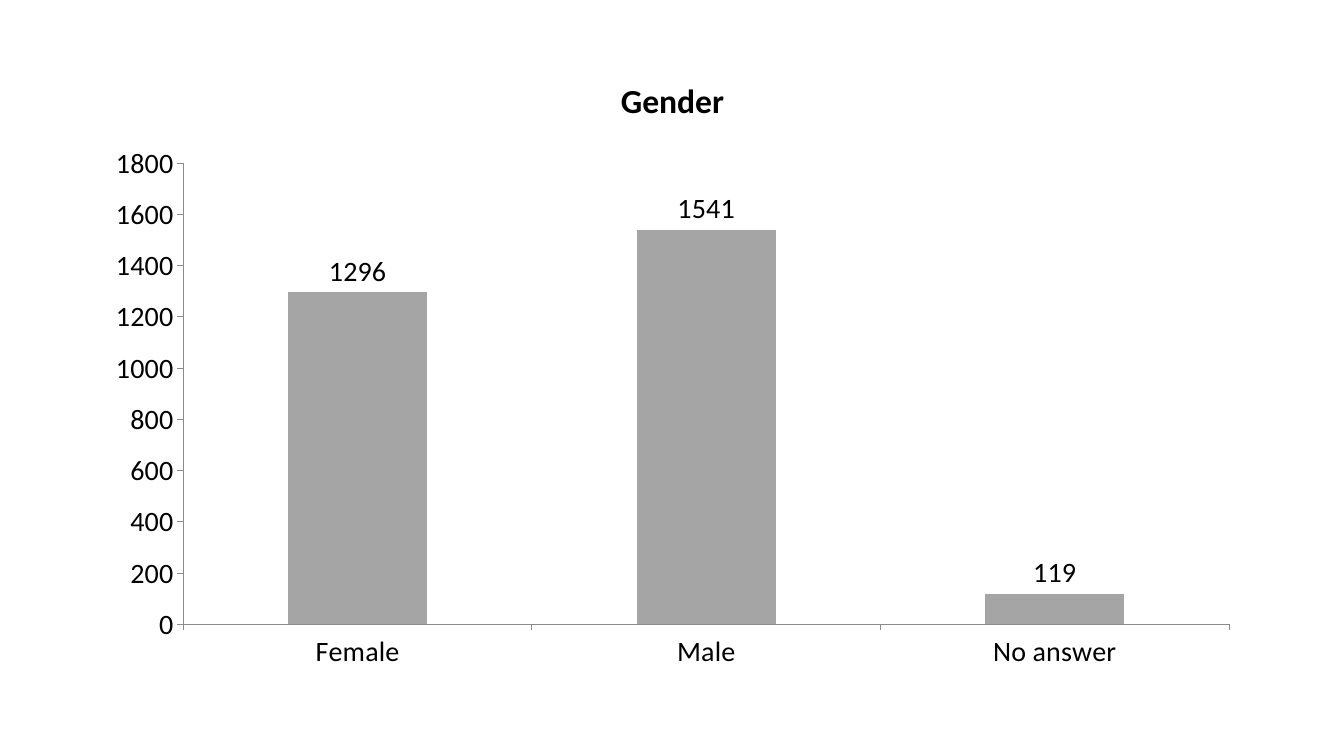
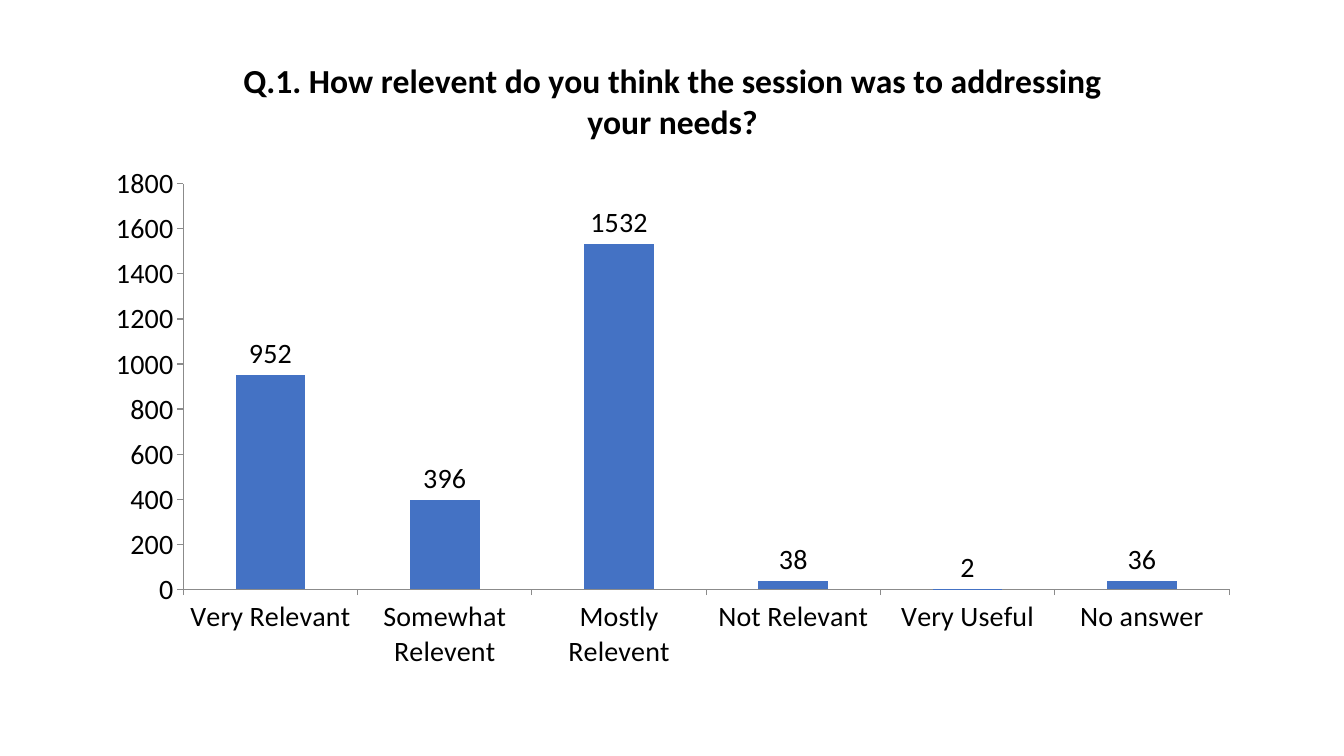
"""Build two survey result slides, each with one column chart."""
import pptx
import pptx.chart.data
import pptx.dml.color
import pptx.enum.chart
import pptx.util
from pptx.dml.color import RGBColor
from pptx.util import Inches

BLACK = RGBColor(0x00, 0x00, 0x00)
AXIS_GRAY = RGBColor(0x8B, 0x8B, 0x8B)
BAR_GRAY = RGBColor(0xA5, 0xA5, 0xA5)
BAR_BLUE = RGBColor(0x44, 0x72, 0xC4)
FONT_NAME = "Calibri"
TEXT_SIZE = 20
TITLE_SIZE = 24
CHART_LEFT = 0.92
CHART_WIDTH = 11.5
CHART_BOTTOM = 6.76

GENDER = {"Female": 1296, "Male": 1541, "No answer": 119}
RELEVANCE = {
    "Very Relevant": 952,
    "Somewhat Relevent": 396,
    "Mostly Relevent": 1532,
    "Not Relevant": 38,
    "Very Useful": 2,
    "No answer": 36,
}


def style_font(font, size, bold=False):
    font.name = FONT_NAME
    font.size = pptx.util.Pt(size)
    font.bold = bold
    font.color.rgb = BLACK


def style_title(chart, title):
    chart.has_title = True
    frame = chart.chart_title.text_frame
    frame.text = title
    style_font(frame.paragraphs[0].runs[0].font, TITLE_SIZE, bold=True)
    chart.chart_title.include_in_layout = False


def style_axis(axis):
    axis.has_major_gridlines = False
    axis.major_tick_mark = pptx.enum.chart.XL_TICK_MARK.OUTSIDE
    axis.minor_tick_mark = pptx.enum.chart.XL_TICK_MARK.NONE
    axis.format.line.color.rgb = AXIS_GRAY
    axis.format.line.width = pptx.util.Pt(0.75)
    style_font(axis.tick_labels.font, TEXT_SIZE)


def style_bars(plot, color):
    plot.gap_width = 150
    plot.vary_by_categories = False
    fill = plot.series[0].format.fill
    fill.solid()
    fill.fore_color.rgb = color
    plot.has_data_labels = True
    labels = plot.data_labels
    labels.show_value = True
    labels.position = pptx.enum.chart.XL_LABEL_POSITION.OUTSIDE_END
    style_font(labels.font, TEXT_SIZE)


def add_chart_slide(deck, title, answers, top, color):
    page = deck.slides.add_slide(deck.slide_layouts[6])
    data = pptx.chart.data.CategoryChartData()
    data.categories = list(answers)
    data.add_series(title, list(answers.values()))
    chart = page.shapes.add_chart(
        pptx.enum.chart.XL_CHART_TYPE.COLUMN_CLUSTERED,
        Inches(CHART_LEFT), Inches(top),
        Inches(CHART_WIDTH), Inches(CHART_BOTTOM - top), data,
    ).chart
    style_font(chart.font, TEXT_SIZE)
    chart.has_legend = False
    style_title(chart, title)
    for axis in (chart.category_axis, chart.value_axis):
        style_axis(axis)
    chart.value_axis.minimum_scale = 0
    chart.value_axis.maximum_scale = 1800
    chart.value_axis.major_unit = 200
    style_bars(chart.plots[0], color)


def main():
    deck = pptx.Presentation()
    deck.slide_width = Inches(13.33)
    deck.slide_height = Inches(7.5)
    add_chart_slide(deck, "Gender", GENDER, 0.54, BAR_GRAY)
    question = "Q.1. How relevent do you think the session was to addressing your needs?"
    add_chart_slide(deck, question, RELEVANCE, 0.33, BAR_BLUE)
    deck.save("out.pptx")


if __name__ == "__main__":
    main()
